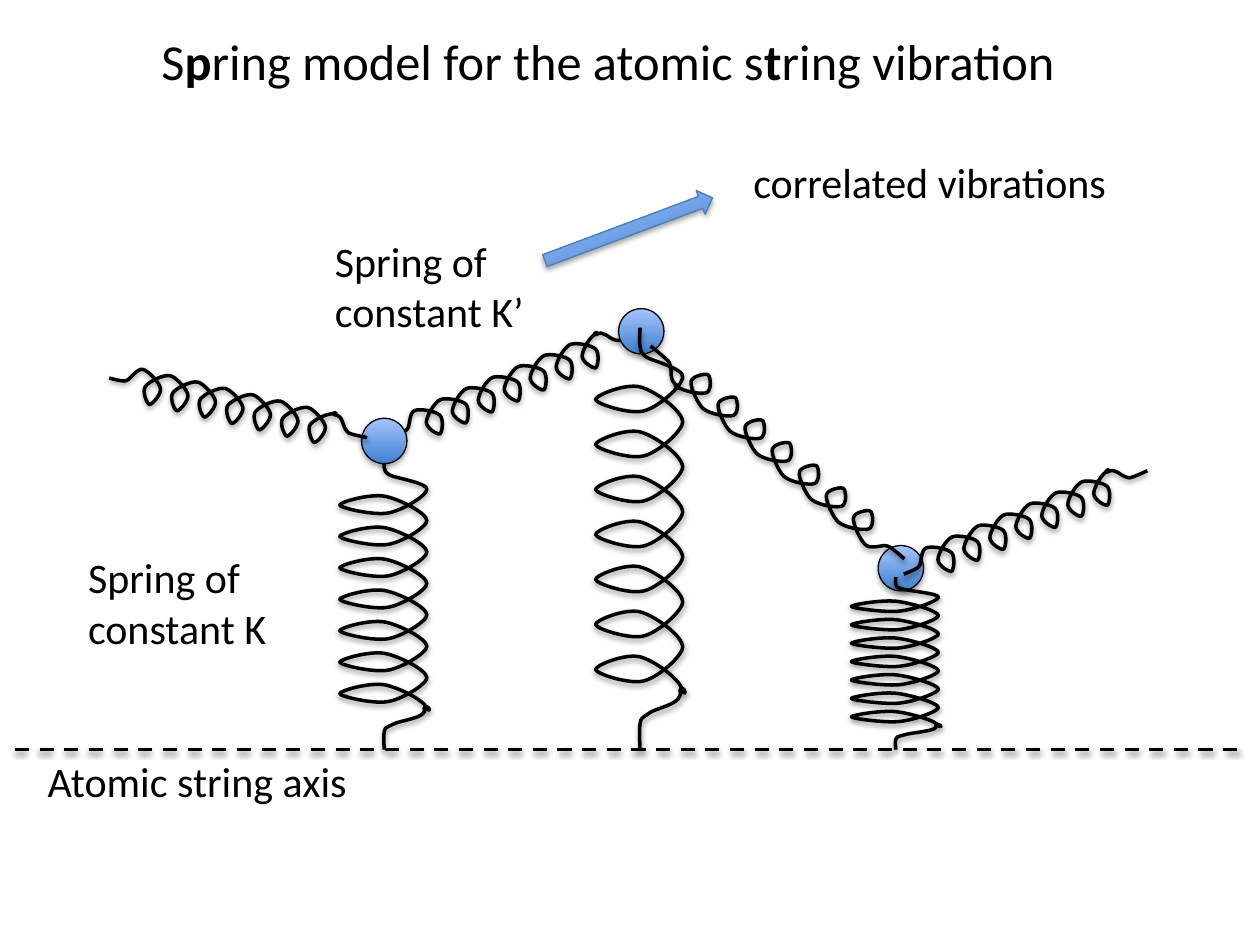
from lxml import etree
from pptx import Presentation
from pptx.dml.color import RGBColor
from pptx.enum import dml, shapes, text
from pptx.oxml import ns
from pptx.util import Inches, Pt

BLACK = "000000"
AXIS_Y = 5.95
BALL_SIZE = 0.36

# Spring outline as Bezier triples of (across / width, along / length).
LEAD_IN = [(0, 0.025), (-0.01, 0.032), (0, 0.044),
           (0.01, 0.055), (0, 0.058), (0.07, 0.07),
           (0.15, 0.08), (0.48, 0.097), (0.47, 0.117)]
TAIL = [(0.54, 0.875), (0.46, 0.84), (0.44, 0.86),
        (0.49, 0.893), (0.17, 0.9), (0.09, 0.915),
        (0.01, 0.927), (0.01, 0.925), (0, 0.94),
        (-0.01, 0.952), (0, 1), (0, 1)]
# One coil, with the second value as a share of the coil pitch.
COIL = [(0.47, 0.2), (0.19, 0.7), (0.03, 0.76),
        (-0.13, 0.83), (-0.49, 0.59), (-0.49, 0.5),
        (-0.49, 0.41), (-0.17, 0.14), (0, 0.22),
        (0.16, 0.3), (0.47, 0.75), (0.47, 1)]
COIL_COUNT = 7
COIL_START, COIL_PITCH = 0.117, 0.1066


def color(value):
    return RGBColor.from_string(value)


def add_shadow(shape, distance=1.6, opacity=38):
    properties = shape._element.spPr
    effects = etree.SubElement(properties, ns.qn("a:effectLst"))
    shadow = etree.SubElement(
        effects, ns.qn("a:outerShdw"), blurRad=str(Pt(3.1)),
        dist=str(Pt(distance)), dir="5400000", rotWithShape="0")
    black = etree.SubElement(shadow, ns.qn("a:srgbClr"), val=BLACK)
    etree.SubElement(black, ns.qn("a:alpha"), val=str(opacity * 1000))


def set_line(shape, value=BLACK, width=2):
    shape.line.color.rgb = color(value)
    shape.line.width = Pt(width)


def add_text(slide, runs, left, top, width, height, size=24, wrap=True,
             align=text.PP_ALIGN.LEFT, anchor=text.MSO_ANCHOR.TOP):
    """Add a text box from (wording, bold) pairs."""
    box = slide.shapes.add_textbox(
        Inches(left), Inches(top), Inches(width), Inches(height))
    frame = box.text_frame
    frame.word_wrap = wrap
    frame.vertical_anchor = anchor
    paragraph = frame.paragraphs[0]
    paragraph.alignment = align
    for wording, bold in runs:
        run = paragraph.add_run()
        run.text = wording
        run.font.name = "Calibri"
        run.font.size = Pt(size)
        run.font.bold = bold
        run.font.color.rgb = color(BLACK)


def add_blue_shape(slide, kind, left, top, width, height,
                   line=BLACK, rotation=0):
    shape = slide.shapes.add_shape(
        kind, Inches(left), Inches(top), Inches(width), Inches(height))
    shape.rotation = rotation
    shape.fill.gradient()
    shape.fill.gradient_angle = 90
    for stop, value in zip(shape.fill.gradient_stops, ("3F80CE", "A4C4FF")):
        stop.color.rgb = color(value)
    set_line(shape, line, 0.75)
    add_shadow(shape, 1.8, 35)


def add_ball(slide, left, top):
    add_blue_shape(slide, shapes.MSO_SHAPE.OVAL, left, top,
                   BALL_SIZE, BALL_SIZE)


def curve_segments(shape):
    """Turn each three straight segments into one Bezier segment."""
    lines = list(shape._element.iter(ns.qn("a:lnTo")))
    for first in range(0, len(lines), 3):
        curve = etree.Element(ns.qn("a:cubicBezTo"))
        lines[first].addprevious(curve)
        for line in lines[first:first + 3]:
            curve.append(line[0])
            line.getparent().remove(line)


def add_spring(slide, left, top, width, height, rotation=0):
    coils = [(across, COIL_START + (index + along) * COIL_PITCH)
             for index in range(COIL_COUNT) for across, along in COIL]
    middle = left + width / 2
    points = [(Inches(middle + across * width), Inches(top + along * height))
              for across, along in LEAD_IN + coils + TAIL]
    builder = slide.shapes.build_freeform(Inches(middle), Inches(top))
    builder.add_line_segments(points, close=False)
    spring = builder.convert_to_shape()
    curve_segments(spring)
    spring.rotation = rotation
    spring.fill.background()
    set_line(spring)
    add_shadow(spring)


def add_axis(slide):
    axis = slide.shapes.add_connector(
        shapes.MSO_CONNECTOR.STRAIGHT,
        Inches(0.12), Inches(AXIS_Y), Inches(9.88), Inches(AXIS_Y))
    set_line(axis)
    axis.line.dash_style = dml.MSO_LINE.DASH
    add_shadow(axis)


def add_upright_spring(slide, left, top):
    add_spring(slide, left, top, 0.72, AXIS_Y - top)


def main():
    presentation = Presentation()
    presentation.slide_width = Inches(10)
    presentation.slide_height = Inches(7.5)
    slide = presentation.slides.add_slide(presentation.slide_layouts[6])

    add_text(slide, [("S", False), ("p", True),
                     ("ring model for the atomic s", False), ("t", True),
                     ("ring vibration", False)],
             0.5, 0.2, 8.65, 0.55, size=28.8,
             align=text.PP_ALIGN.CENTER, anchor=text.MSO_ANCHOR.MIDDLE)

    add_axis(slide)
    add_upright_spring(slide, 2.69, 3.61)
    add_ball(slide, 6.97, 4.33)
    add_spring(slide, 3.94, 2, 0.26, 2.1, rotation=247)
    add_ball(slide, 4.91, 2.45)
    add_spring(slide, 6.04, 2.28, 0.24, 2.63, rotation=130)
    add_ball(slide, 2.87, 3.32)
    add_upright_spring(slide, 4.72, 2.6)
    add_upright_spring(slide, 6.75, 4.58)
    add_spring(slide, 1.75, 2.18, 0.27, 2.1, rotation=283)
    add_spring(slide, 8, 3.09, 0.26, 2.1, rotation=247)

    add_text(slide, [("Spring of constant K’", False)], 2.56, 1.82, 2.05, 0.91)
    add_text(slide, [("Spring of constant K", False)], 0.6, 4.33, 1.88, 0.91)
    add_text(slide, [("correlated vibrations", False)],
             5.88, 1.19, 3.05, 0.5, wrap=False)
    add_blue_shape(slide, shapes.MSO_SHAPE.RIGHT_ARROW, 4.28, 1.72, 1.42, 0.2,
                   line="4B7EBC", rotation=339.5)
    add_text(slide, [("Atomic string axis", False)],
             0.28, AXIS_Y, 2.62, 0.5, wrap=False)

    presentation.save("out.pptx")


if __name__ == "__main__":
    main()
